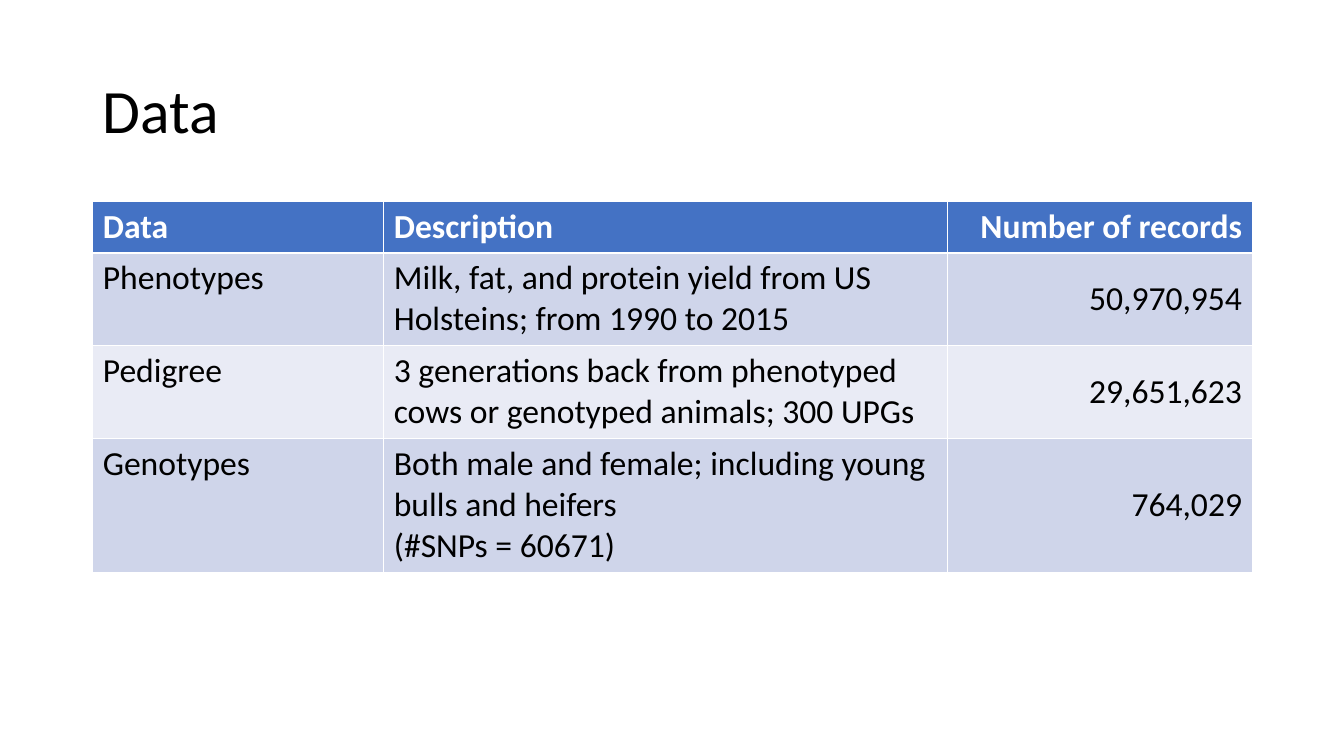
from pptx import Presentation
from pptx.dml.color import RGBColor
from pptx.enum.text import MSO_ANCHOR, PP_ALIGN
from pptx.util import Inches, Pt

# Content
TITLE = "Data"
RECORDS = [
    ("Data", "Description", "Number of records"),
    ("Phenotypes", "Milk, fat, and protein yield from US Holsteins; from 1990 to 2015", "50,970,954"),
    ("Pedigree", "3 generations back from phenotyped cows or genotyped animals; 300 UPGs", "29,651,623"),
    ("Genotypes", "Both male and female; including young bulls and heifers\v(#SNPs = 60671)", "764,029"),
]
LINES_PER_ROW = [1, 2, 2, 3]

# Format
COLORS = {"header": "4472C4", "odd": "CFD5EA", "even": "E9EBF5", "light": "FFFFFF", "dark": "000000"}
TITLE_FONT = {"name": "Calibri", "size": Pt(44), "bold": False}
TABLE_FONT = {"name": "Calibri", "size": Pt(24)}
SLIDE_WIDTH, SLIDE_HEIGHT = 13.33, 7.5
MARGIN = 0.92
CONTENT_WIDTH = 11.5
COLUMN_SHARES = [0.251, 0.486, 0.263]
LINE_HEIGHT, ROW_PADDING = 0.41, 0.1


def style_text(paragraph, font_values, color):
    for run in paragraph.runs:
        for attribute, value in font_values.items():
            setattr(run.font, attribute, value)
        run.font.color.rgb = RGBColor.from_string(COLORS[color])


def add_title(slide):
    title = slide.shapes.title
    title.left, title.top = Inches(MARGIN), Inches(0.4)
    title.width, title.height = Inches(CONTENT_WIDTH), Inches(1.45)
    frame = title.text_frame
    frame.text = TITLE
    frame.vertical_anchor = MSO_ANCHOR.MIDDLE
    heading = frame.paragraphs[0]
    heading.alignment = PP_ALIGN.LEFT
    heading.line_spacing = 0.9
    style_text(heading, TITLE_FONT, "dark")


def add_records(slide):
    row_heights = [lines * LINE_HEIGHT + ROW_PADDING for lines in LINES_PER_ROW]
    records = slide.shapes.add_table(
        len(RECORDS), len(COLUMN_SHARES), Inches(MARGIN), Inches(2),
        Inches(CONTENT_WIDTH), Inches(sum(row_heights))).table
    for column, share in zip(records.columns, COLUMN_SHARES):
        column.width = Inches(CONTENT_WIDTH * share)
    for row, height in zip(records.rows, row_heights):
        row.height = Inches(height)

    for r, record in enumerate(RECORDS):
        is_header = r == 0
        band = "header" if is_header else ("odd" if r % 2 else "even")
        for c, content in enumerate(record):
            is_count = c == len(record) - 1
            cell = records.cell(r, c)
            cell.fill.solid()
            cell.fill.fore_color.rgb = RGBColor.from_string(COLORS[band])
            entry = cell.text_frame.paragraphs[0]
            entry.text = content
            style_text(entry, {**TABLE_FONT, "bold": is_header}, "light" if is_header else "dark")
            if is_count:
                entry.alignment = PP_ALIGN.RIGHT
                if not is_header:
                    cell.vertical_anchor = MSO_ANCHOR.MIDDLE


def main():
    deck = Presentation()
    deck.slide_width, deck.slide_height = Inches(SLIDE_WIDTH), Inches(SLIDE_HEIGHT)
    slide = deck.slides.add_slide(deck.slide_layouts[5])
    add_title(slide)
    add_records(slide)
    deck.save("out.pptx")


if __name__ == "__main__":
    main()
